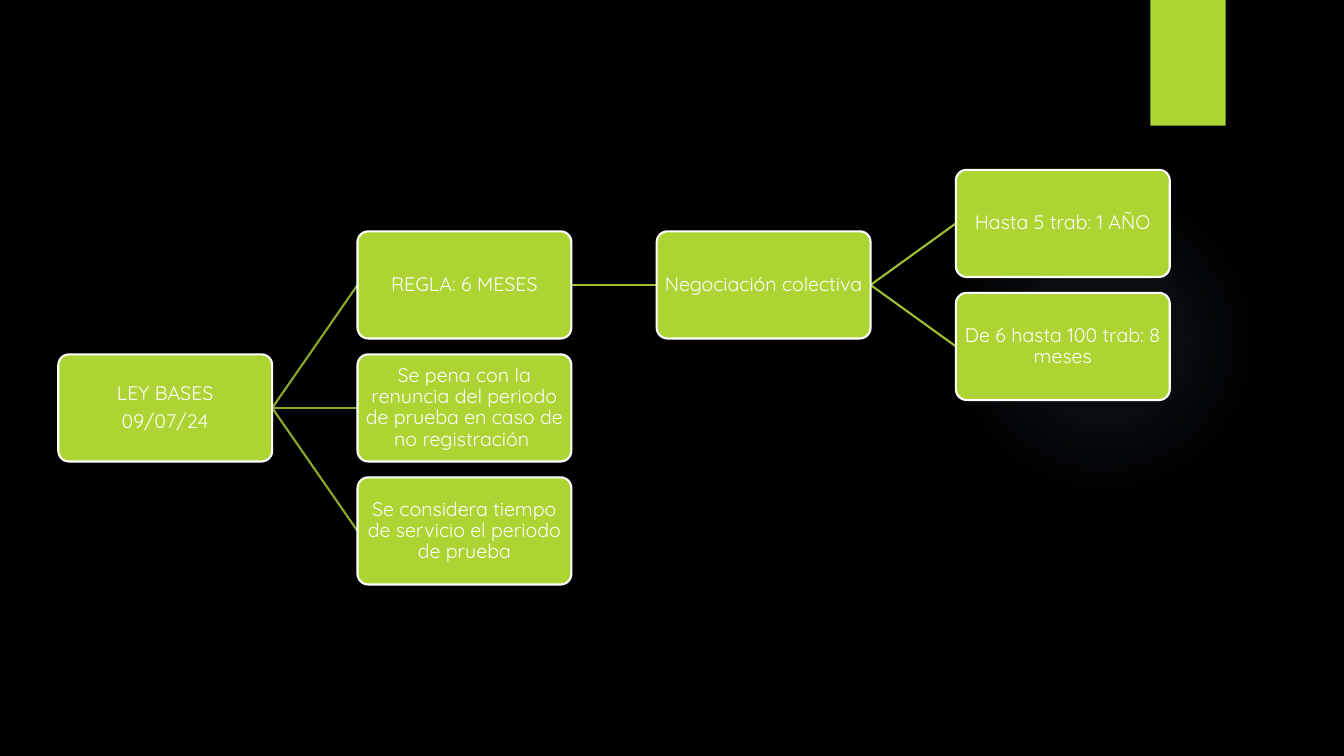
from pptx import Presentation
from pptx.dml.color import RGBColor
from pptx.enum.shapes import MSO_CONNECTOR, MSO_SHAPE
from pptx.enum.text import MSO_ANCHOR, PP_ALIGN
from pptx.oxml import parse_xml
from pptx.oxml.ns import nsdecls
from pptx.util import Cm, Pt

RECT, ROUND, OVAL = MSO_SHAPE.RECTANGLE, MSO_SHAPE.ROUNDED_RECTANGLE, MSO_SHAPE.OVAL
LINE = MSO_CONNECTOR.STRAIGHT
MID, CENTER = MSO_ANCHOR.MIDDLE, PP_ALIGN.CENTER
BLACK = RGBColor(0, 0, 0)
WHITE = RGBColor(0xFF, 0xFF, 0xFF)
LIME = RGBColor(0xAC, 0xD4, 0x33)
OLIVE = RGBColor(0x8A, 0xAA, 0x29)
LEAF = RGBColor(0x9C, 0xC0, 0x2E)

# Content: name -> (column, row, paragraphs)
NODES = {
    "law": (0, 0, ["LEY BASES", "09/07/24"]),
    "rule": (1, -1, ["REGLA: 6 MESES"]),
    "deal": (2, -1, ["Negociación colectiva"]),
    "small": (3, -1.5, ["Hasta 5 trab: 1 AÑO"]),
    "large": (3, -0.5, ["De 6 hasta 100 trab: 8 meses"]),
    "fine": (1, 0, ["Se pena con la renuncia del periodo de prueba en caso de "
                    "no registración "]),
    "time": (1, 1, ["Se considera tiempo de servicio el periodo de prueba"]),
}
LINKS = [
    ("law", "rule", OLIVE), ("law", "fine", OLIVE), ("law", "time", OLIVE),
    ("rule", "deal", LEAF), ("deal", "small", LEAF), ("deal", "large", LEAF),
]
GLOW = [(0, 7), (36, 6), (69, 0)]  # stop and opacity, in percent

# Layout in centimetres
LEFT, AXIS = 1.47, 10.28
WIDE, HIGH = 5.39, 2.7
COL, ROW = 7.54, 3.1
FRAME = {"word_wrap": True, "vertical_anchor": MID,
         **{"margin_" + side: Cm(0.1) for side in ("left", "right", "top", "bottom")}}
PARA = {"alignment": CENTER, "line_spacing": 0.9, "space_after": Pt(4.9)}
FONT = {"name": "Quicksand", "size": Pt(14)}


def style(item, values):
    for key, value in values.items():
        setattr(item, key, value)


def add_shape(slide, kind, box, fill=None):
    shape = slide.shapes.add_shape(kind, *[Cm(n) for n in box])
    shape.shadow.inherit = False
    shape.line.fill.background()
    if fill is None:
        shape.fill.background()
    else:
        shape.fill.solid()
        shape.fill.fore_color.rgb = fill
    return shape


def add_glow(slide):
    oval = add_shape(slide, OVAL, (23.9, 4.65, 7.82, 7.82))
    stops = "".join(
        f'<a:gs pos="{pos * 1000}"><a:srgbClr val="7AC4F0">'
        f'<a:alpha val="{alpha * 1000}"/></a:srgbClr></a:gs>'
        for pos, alpha in GLOW)
    grad = parse_xml(
        f'<a:gradFill {nsdecls("a")} rotWithShape="1"><a:gsLst>{stops}</a:gsLst>'
        '<a:path path="circle"><a:fillToRect l="50000" t="50000" r="50000" '
        'b="50000"/></a:path></a:gradFill>')
    props = oval.element.spPr
    props.replace(props.find("{*}noFill"), grad)


def add_link(slide, start, end, color):
    (col, row, _), (col2, row2, _) = NODES[start], NODES[end]
    line = slide.shapes.add_connector(
        LINE, Cm(LEFT + col * COL + WIDE), Cm(AXIS + row * ROW),
        Cm(LEFT + col2 * COL), Cm(AXIS + row2 * ROW))
    line.line.color.rgb = color
    line.line.width = Pt(1.5)
    line.element.spPr.append(parse_xml(f'<a:effectLst {nsdecls("a")}/>'))


def add_node(slide, col, row, lines):
    box = (LEFT + col * COL, AXIS + row * ROW - HIGH / 2, WIDE, HIGH)
    node = add_shape(slide, ROUND, box, LIME)
    node.adjustments[0] = 0.1
    node.line.color.rgb = WHITE
    node.line.width = Pt(1.5)
    frame = node.text_frame
    style(frame, FRAME)
    for i, text in enumerate(lines):
        para = frame.add_paragraph() if i else frame.paragraphs[0]
        style(para, PARA)
        run = para.add_run()
        run.text = text
        style(run.font, FONT)
        run.font.color.rgb = WHITE


def main():
    deck = Presentation()
    deck.slide_width, deck.slide_height = Cm(33.87), Cm(19.05)
    slide = deck.slides.add_slide(deck.slide_layouts[6])
    slide.background.fill.solid()
    slide.background.fill.fore_color.rgb = BLACK

    # Backdrop
    add_glow(slide)
    add_shape(slide, RECT, (28.99, 0, 1.9, 3.17), LIME)

    # Tree
    for link in LINKS:
        add_link(slide, *link)
    for node in NODES.values():
        add_node(slide, *node)

    deck.save("out.pptx")


if __name__ == "__main__":
    main()
